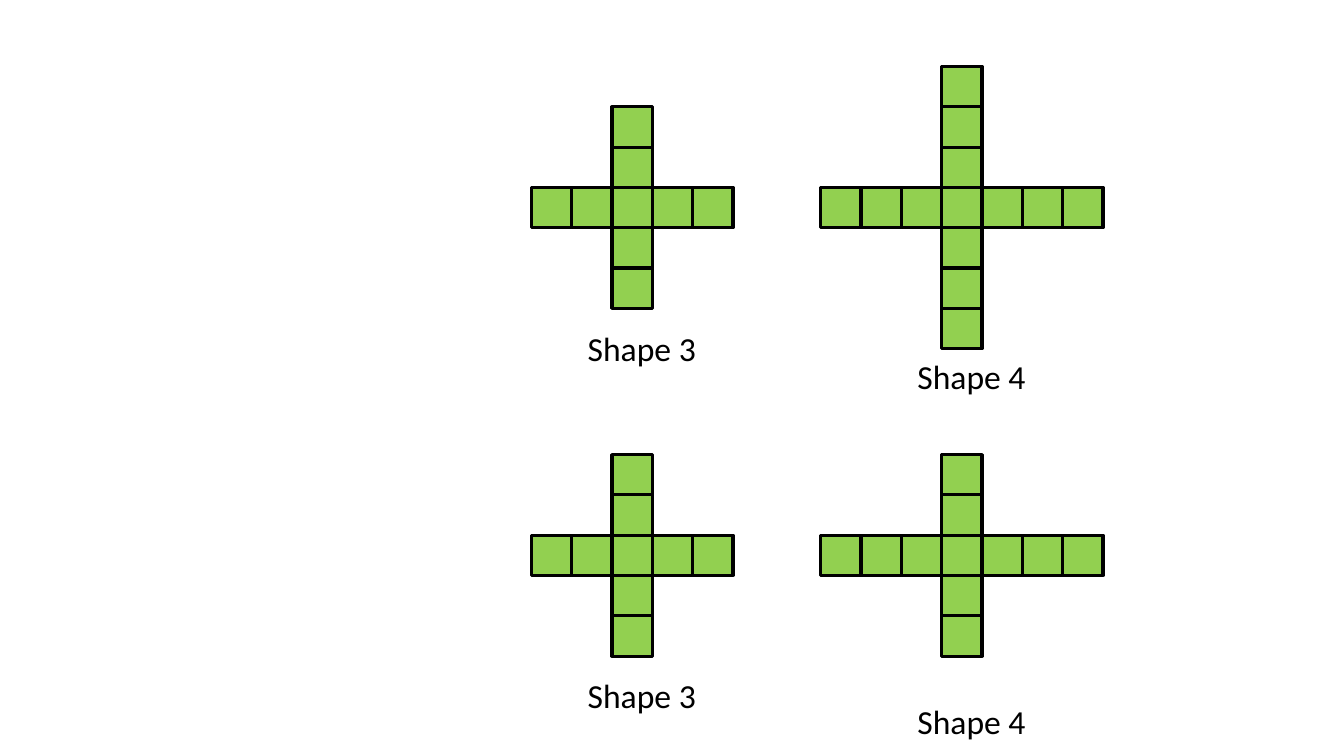
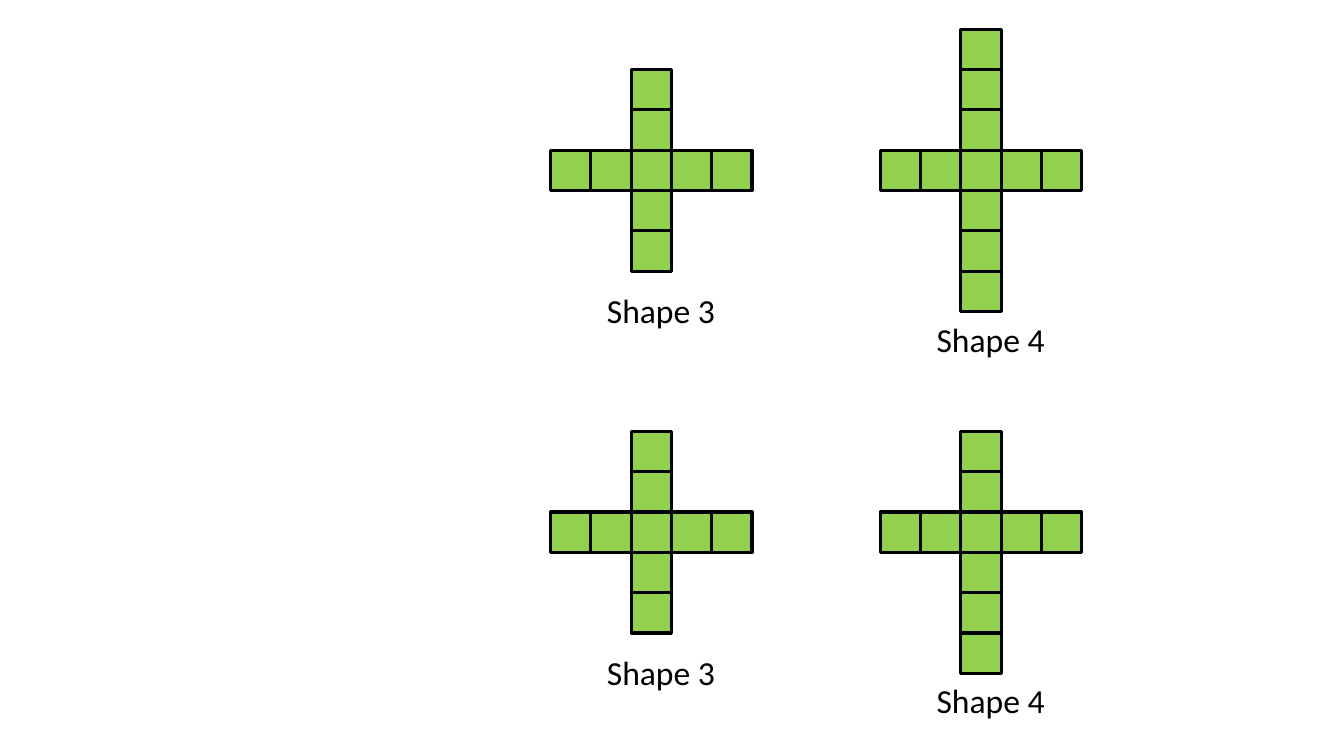
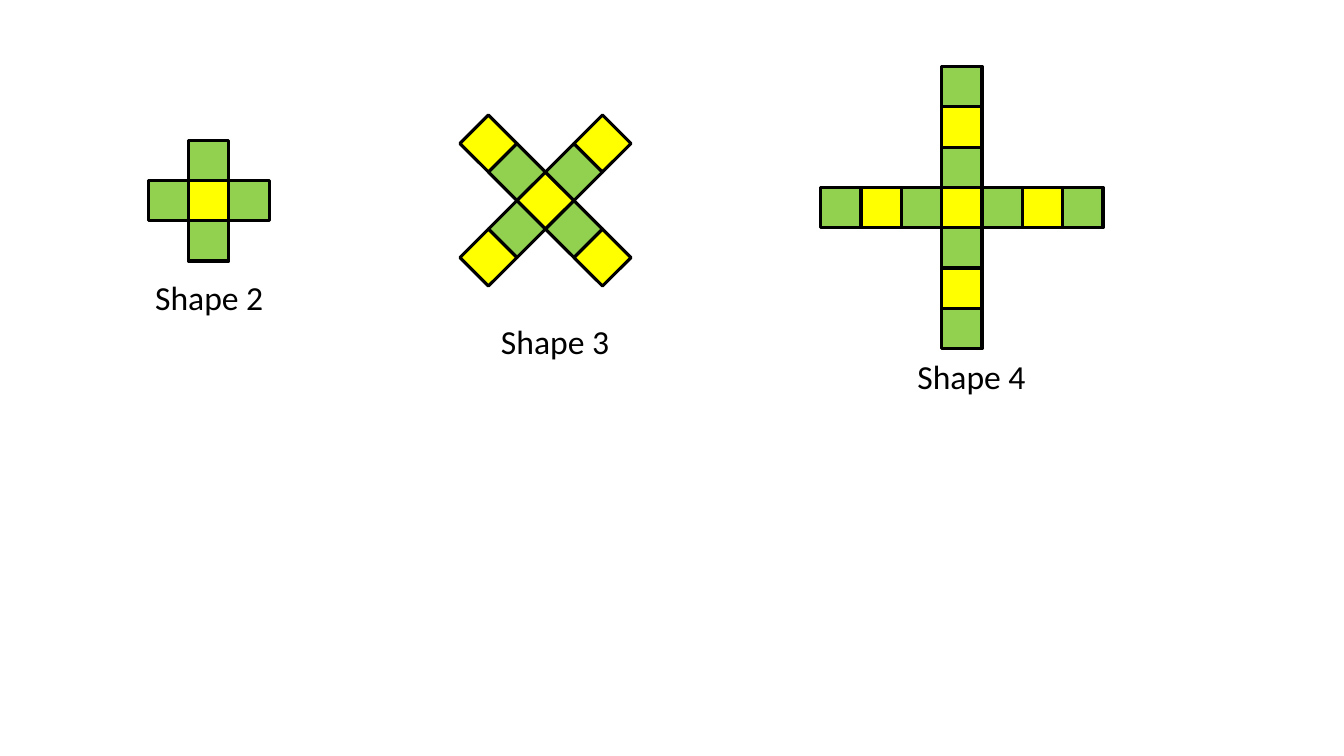
import math

from pptx import Presentation
from pptx.dml.color import RGBColor
from pptx.enum.shapes import MSO_SHAPE
from pptx.enum.text import MSO_AUTO_SIZE, PP_ALIGN
from pptx.util import Inches, Pt

RECTANGLE = MSO_SHAPE.RECTANGLE
GROW = MSO_AUTO_SIZE.SHAPE_TO_FIT_TEXT
CENTER = PP_ALIGN.CENTER

BLANK_LAYOUT = 6
COLORS = {"green": "92D050", "yellow": "FFFF00", "black": "000000"}
PLAIN = ("green", "green")
ALTERNATING = ("yellow", "green")


class PatternDeck:
    font = "Calibri"
    text_size = Pt(24)
    outline = Pt(2.25)
    side = 0.4
    label_size = (1.81, 0.5)

    def __init__(self):
        self.presentation = Presentation()
        self.presentation.slide_width = Inches(13.33)
        self.presentation.slide_height = Inches(7.5)
        self.slide = None

    def color(self, name):
        return RGBColor.from_string(COLORS[name])

    def add_slide(self):
        layout = self.presentation.slide_layouts[BLANK_LAYOUT]
        self.slide = self.presentation.slides.add_slide(layout)

    def tile(self, group, left, top, fill, angle):
        shape = group.shapes.add_shape(
            RECTANGLE, Inches(left), Inches(top), Inches(self.side), Inches(self.side))
        shape.rotation = angle
        shape.shadow.inherit = False
        shape.fill.solid()
        shape.fill.fore_color.rgb = self.color(fill)
        shape.line.color.rgb = self.color("black")
        shape.line.width = self.outline

    def label(self, group, text, left, top):
        width, height = self.label_size
        box = group.shapes.add_textbox(
            Inches(left), Inches(top), Inches(width), Inches(height))
        frame = box.text_frame
        frame.word_wrap = True
        frame.auto_size = GROW
        frame.text = text
        paragraph = frame.paragraphs[0]
        paragraph.alignment = CENTER
        font = paragraph.runs[0].font
        font.name = self.font
        font.size = self.text_size
        font.color.rgb = self.color("black")

    def cross(self, text, left, top, arms, label_top, label_shift=-0.61,
              fills=PLAIN, angle=0):
        """Draw a labelled cross around the tile at left, top.

        arms counts the tiles to each side, above and below the middle;
        fills holds the colours at even and odd distance from it.
        """
        sideways, above, below = arms
        group = self.slide.shapes.add_group_shape()
        self.tile(group, left, top, fills[0], angle)
        directions = ((180, sideways), (0, sideways), (270, above), (90, below))
        for direction, count in directions:
            heading = math.radians(direction + angle)
            for distance in range(1, count + 1):
                reach = distance * self.side
                self.tile(group, left + reach * math.cos(heading),
                          top + reach * math.sin(heading),
                          fills[distance % 2], angle)
        self.label(group, text, left + label_shift, label_top)


def main():
    deck = PatternDeck()

    deck.add_slide()
    deck.cross("Shape 3", 6.07, 1.86, (2, 2, 2), 3.2)
    deck.cross("Shape 4", 9.34, 1.86, (3, 3, 3), 3.48)
    deck.cross("Shape 3", 6.07, 5.31, (2, 2, 2), 6.65)
    deck.cross("Shape 4", 9.34, 5.31, (3, 2, 2), 6.9)

    deck.add_slide()
    deck.cross("Shape 3", 6.26, 1.49, (2, 2, 2), 2.83)
    deck.cross("Shape 4", 9.53, 1.49, (2, 3, 3), 3.11)
    deck.cross("Shape 3", 6.26, 5.08, (2, 2, 2), 6.42)
    deck.cross("Shape 4", 9.53, 5.08, (2, 2, 3), 6.7)

    deck.add_slide()
    deck.cross("Shape 3", 5.21, 1.79, (2, 2, 2), 3.13, fills=ALTERNATING, angle=45)
    deck.cross("Shape 2", 1.87, 1.79, (1, 1, 1), 2.7, label_shift=-0.7,
               fills=ALTERNATING)
    deck.cross("Shape 4", 9.34, 1.86, (3, 3, 3), 3.48, fills=ALTERNATING)

    deck.presentation.save("out.pptx")


if __name__ == "__main__":
    main()
